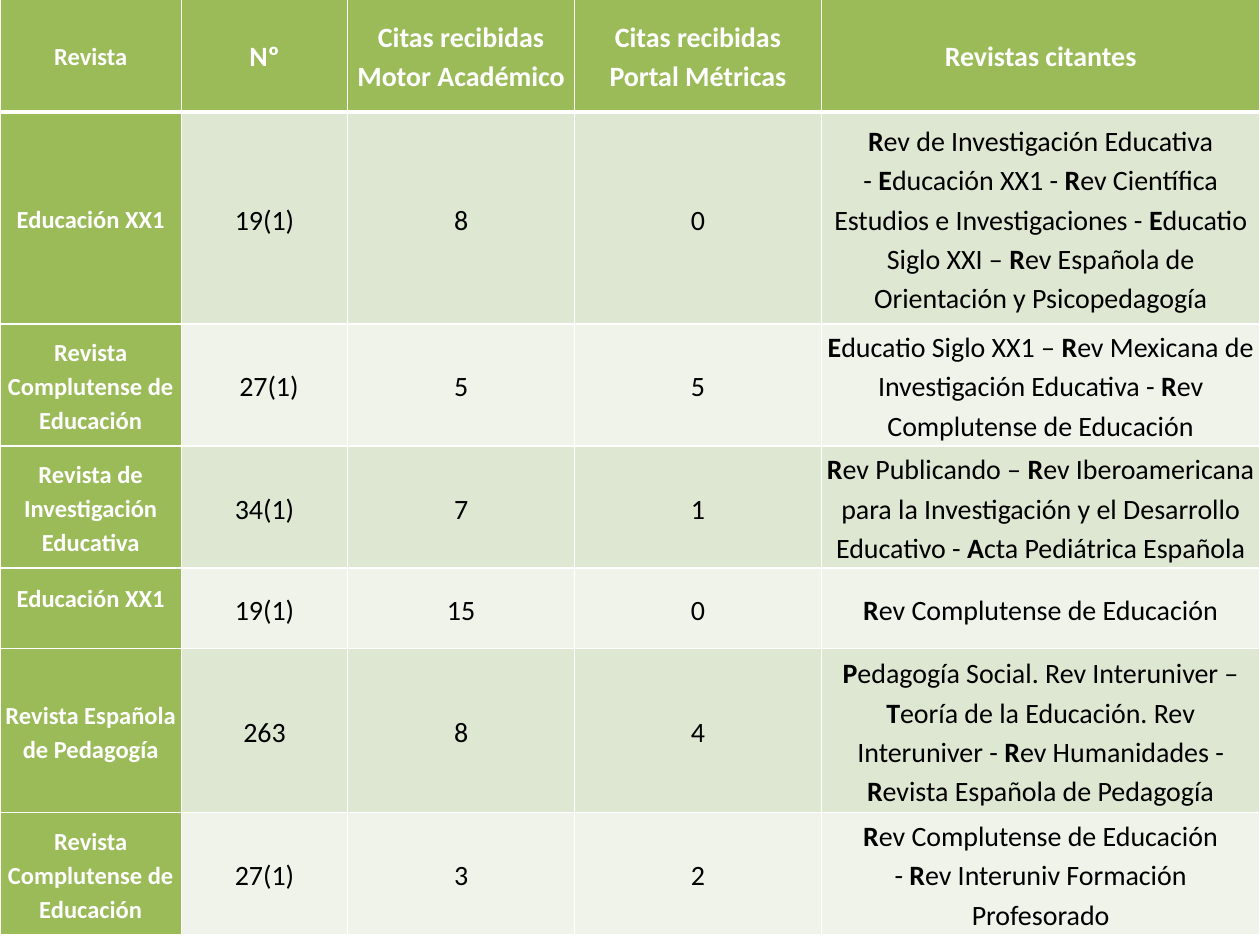
from dataclasses import dataclass

from lxml.etree import SubElement
from pptx import Presentation
from pptx.dml.color import RGBColor as Rgb
from pptx.enum.text import MSO_ANCHOR as Anchor, PP_ALIGN as Align
from pptx.oxml.ns import qn
from pptx.util import Inches, Pt


@dataclass(frozen=True)
class Theme:
    """Colours and type of the slide."""
    font: str = "Calibri"
    accent: str = "9BBB59"
    bands: tuple = ("DEE7D1", "EFF3EA")
    light: str = "FFFFFF"
    dark: str = "000000"
    journal_size: int = 14
    body_size: int = 16
    rule: int = 1
    header_rule: int = 3


THEME = Theme()
COLUMN_WIDTHS = (1.44, 1.32, 1.8, 1.96, 3.48)
ROW_HEIGHTS = (0.91, 1.68, 0.97, 0.97, 0.64, 1.3, 0.97)
CITATIONS = (
    ("Revista", "Nº", "Citas recibidas\nMotor Académico",
     "Citas recibidas\nPortal Métricas", "Revistas citantes"),
    ("Educación XX1", "19(1)", "8", "0",
     "*R*ev de Investigación Educativa\n- *E*ducación XX1 - *R*ev Científica "
     "Estudios e Investigaciones - *E*ducatio Siglo XXI – *R*ev Española de "
     "Orientación y Psicopedagogía"),
    ("Revista Complutense de Educación", "27(1)", "5", "5",
     "*E*ducatio Siglo XX1 – *R*ev Mexicana de Investigación Educativa - "
     "*R*ev Complutense de Educación"),
    ("Revista de Investigación Educativa", "34(1)", "7", "1",
     "*R*ev Publicando – *R*ev Iberoamericana para la Investigación y el "
     "Desarrollo Educativo - *A*cta Pediátrica Española"),
    ("Educación XX1", "19(1)", "15", "0", "*R*ev Complutense de Educación"),
    ("Revista Española de Pedagogía", "263", "8", "4",
     "*P*edagogía Social. Rev Interuniver – *T*eoría de la Educación. Rev "
     "Interuniver - *R*ev Humanidades -\n*R*evista Española de Pedagogía"),
    ("Revista Complutense de Educación", "27(1)", "3", "2",
     "*R*ev Complutense de Educación\n- *R*ev Interuniv Formación Profesorado"),
)


def draw_borders(cell, row):
    """Rule the four sides of a cell, heavier below the header."""
    heavy_side = {0: "lnB", 1: "lnT"}.get(row)
    properties = cell._tc.get_or_add_tcPr()
    for side in ("lnL", "lnR", "lnT", "lnB"):
        width = THEME.header_rule if side == heavy_side else THEME.rule
        border = SubElement(properties, qn(f"a:{side}"), w=str(Pt(width)))
        fill = SubElement(border, qn("a:solidFill"))
        SubElement(fill, qn("a:srgbClr"), val=THEME.light)


def write_text(cell, text, size, color, bold):
    """Write centred lines, with the letters between asterisks in bold."""
    frame = cell.text_frame
    for index, line in enumerate(text.split("\n")):
        paragraph = frame.add_paragraph() if index else frame.paragraphs[0]
        paragraph.alignment = Align.CENTER
        paragraph.line_spacing = 1.15
        for position, piece in enumerate(line.split("*")):
            if piece:
                run = paragraph.add_run()
                run.text = piece
                run.font.name = THEME.font
                run.font.size = Pt(size)
                run.font.bold = bold or position % 2 == 1
                run.font.color.rgb = Rgb.from_string(color)


def fill_cell(cell, row, column, text):
    """Format one cell according to its place in the table."""
    heading = row == 0 or column == 0
    cell.vertical_anchor = Anchor.MIDDLE
    cell.margin_left = cell.margin_right = Inches(0.03)
    cell.margin_top = cell.margin_bottom = 0
    draw_borders(cell, row)
    cell.fill.solid()
    background = THEME.accent if heading else THEME.bands[(row - 1) % 2]
    cell.fill.fore_color.rgb = Rgb.from_string(background)
    size = THEME.body_size if column else THEME.journal_size
    write_text(cell, text, size, THEME.light if heading else THEME.dark, heading)


def add_citation_table(slide, left, top, width, height):
    """Place the table of journals and their citations in its box."""
    frame = slide.shapes.add_table(
        len(CITATIONS), len(COLUMN_WIDTHS), left, top, width, height)
    table = frame.table
    for column, share in zip(table.columns, COLUMN_WIDTHS):
        column.width = int(width * share / sum(COLUMN_WIDTHS))
    for row, share in zip(table.rows, ROW_HEIGHTS):
        row.height = int(height * share / sum(ROW_HEIGHTS))
    for row, record in enumerate(CITATIONS):
        for column, text in enumerate(record):
            fill_cell(table.cell(row, column), row, column, text)
    table.cell(2, 1).margin_left = Inches(0.1)
    table.cell(4, 0).margin_bottom = Inches(0.18)


def main():
    """Build and save the slide."""
    deck = Presentation()
    deck.slide_width, deck.slide_height = Inches(10), Inches(7.5)
    slide = deck.slides.add_slide(deck.slide_layouts[6])
    add_citation_table(slide, 0, Inches(-0.02), Inches(10), Inches(7.44))
    deck.save("out.pptx")


if __name__ == "__main__":
    main()
